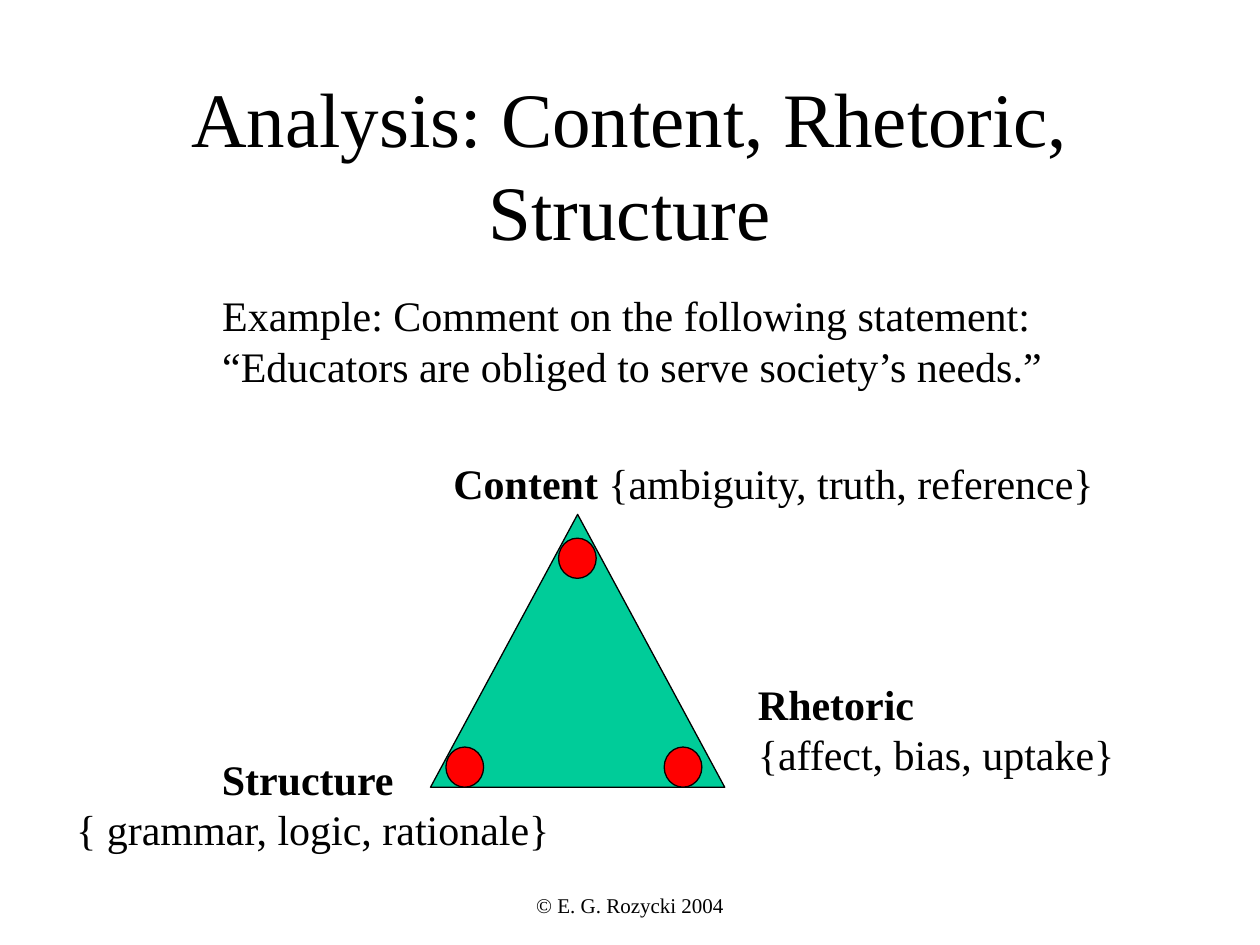
from pptx import Presentation, util as u
from pptx.dml.color import RGBColor
from pptx.enum import shapes, text

COLOURS = {"ink": "000000", "triangle": "00CC99", "corner": "FF0000"}
LEFT, CENTRE = text.PP_ALIGN.LEFT, text.PP_ALIGN.CENTER


class AnalysisSlide:
    font = "Times New Roman"
    body_size = 24

    def __init__(self, deck):
        self.slide = deck.slides.add_slide(deck.slide_layouts[5])

    def colour(self, name):
        return RGBColor.from_string(COLOURS[name])

    def add_words(self, paragraph, wording, size, bold=False):
        run = paragraph.add_run()
        run.text = wording
        run.font.name = self.font
        run.font.size = u.Pt(size)
        run.font.bold = bold
        run.font.color.rgb = self.colour("ink")

    def title(self, wording, left, top, width, height):
        heading = self.slide.shapes.title
        heading.left, heading.top = u.Cm(left), u.Cm(top)
        heading.width, heading.height = u.Cm(width), u.Cm(height)
        frame = heading.text_frame
        frame.auto_size = text.MSO_AUTO_SIZE.NONE
        frame.vertical_anchor = text.MSO_ANCHOR.MIDDLE
        frame.paragraphs[0].alignment = CENTRE
        self.add_words(frame.paragraphs[0], wording, 44)

    def label(self, lines, left, top, width, height, align=LEFT):
        frame = self.slide.shapes.add_textbox(
            u.Cm(left), u.Cm(top), u.Cm(width), u.Cm(height)).text_frame
        frame.word_wrap = False
        frame.auto_size = text.MSO_AUTO_SIZE.SHAPE_TO_FIT_TEXT
        for number, runs in enumerate(lines):
            paragraph = frame.add_paragraph() if number else frame.paragraphs[0]
            paragraph.alignment = align
            for wording, bold in runs:
                self.add_words(paragraph, wording, self.body_size, bold)

    def footer(self, wording, left, top, width, height):
        frame = self.slide.shapes.add_textbox(
            u.Cm(left), u.Cm(top), u.Cm(width), u.Cm(height)).text_frame
        frame.word_wrap = True
        frame.vertical_anchor = text.MSO_ANCHOR.BOTTOM
        frame.paragraphs[0].alignment = CENTRE
        self.add_words(frame.paragraphs[0], wording, 12)

    def figure(self, group, kind, fill, left, top, width, height):
        part = group.shapes.add_shape(
            kind, u.Cm(left), u.Cm(top), u.Cm(width), u.Cm(height))
        part.shadow.inherit = False
        part.fill.solid()
        part.fill.fore_color.rgb = self.colour(fill)
        part.line.color.rgb = self.colour("ink")
        part.line.width = u.Pt(0.75)

    def triangle(self, left, top, width, height, corners):
        group = self.slide.shapes.add_group_shape()
        kinds = shapes.MSO_SHAPE
        self.figure(group, kinds.ISOSCELES_TRIANGLE, "triangle", left, top, width, height)
        for corner_left, corner_top in corners:
            self.figure(group, kinds.OVAL, "corner", corner_left, corner_top, 0.76, 0.81)


def main():
    deck = Presentation()
    deck.slide_width, deck.slide_height = u.Cm(25.4), u.Cm(19.05)
    analysis = AnalysisSlide(deck)
    analysis.title("Analysis: Content, Rhetoric, Structure", 1.9, 1.7, 21.6, 3.18)
    analysis.footer("© E. G. Rozycki 2004", 8.68, 17.36, 8.04, 1.27)
    analysis.label([[("Content", True), (" {ambiguity, truth, reference}", False)]],
                   8.89, 9.1, 13.5, 1.27)
    analysis.label([[("Rhetoric", True)], [("{affect, bias, uptake}", False)]],
                   15.03, 13.55, 7.72, 2.29)
    analysis.label([[("Structure ", True)], [("{ grammar, logic, rationale}", False)]],
                   1.27, 15.06, 10.08, 2.29, CENTRE)
    analysis.triangle(8.68, 10.37, 5.93, 5.5,
                      [(11.26, 10.85), (13.39, 15.06), (8.99, 15.06)])
    analysis.label([[("Example: Comment on the following statement: ", False)],
                    [("“Educators are obliged to serve society’s needs.”", False)]],
                   4.23, 5.72, 17.1, 2.29)
    deck.save("out.pptx")


if __name__ == "__main__":
    main()
